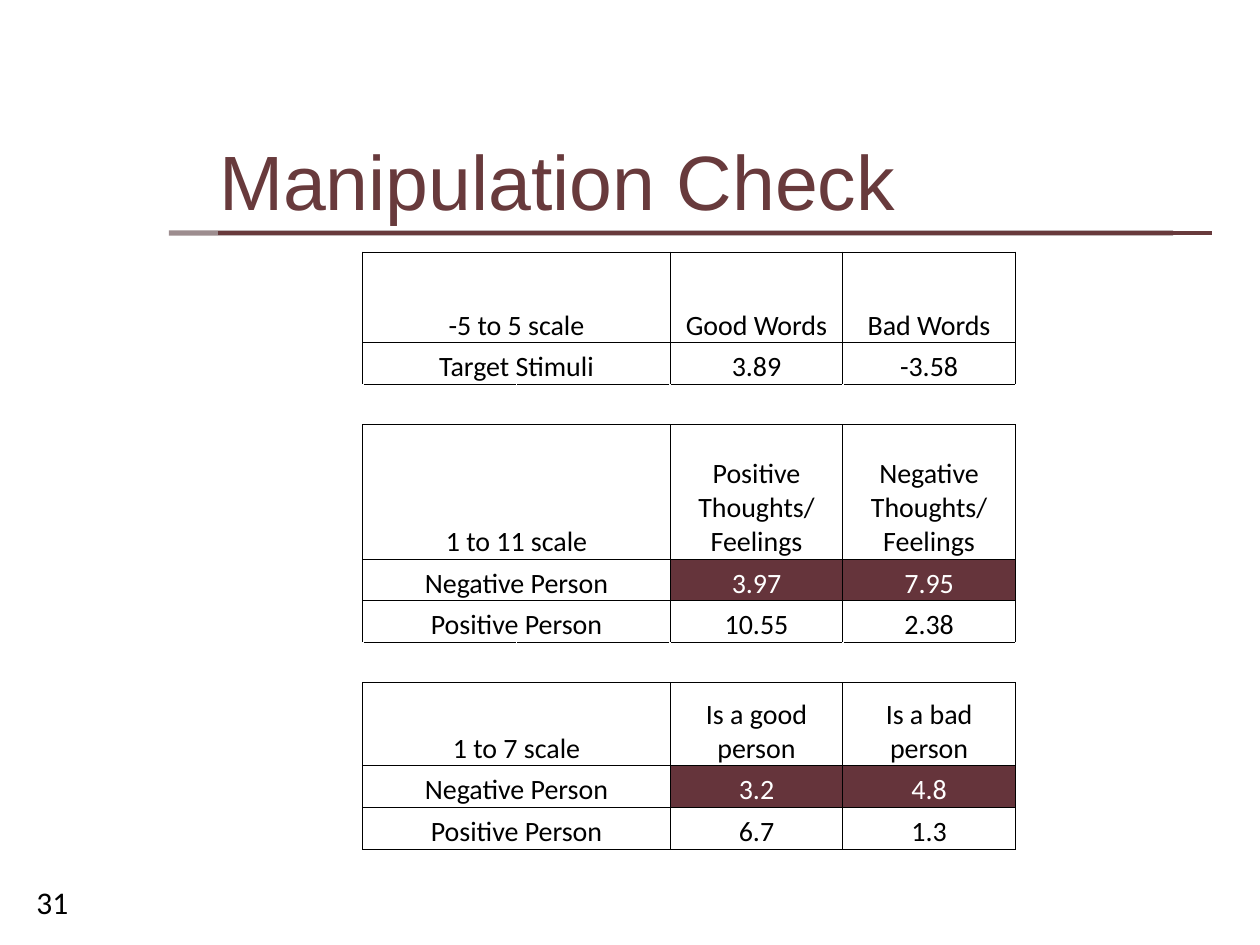
from lxml.etree import SubElement
from pptx import Presentation
from pptx.dml.color import RGBColor
from pptx.enum.shapes import MSO_CONNECTOR
from pptx.enum.text import MSO_ANCHOR, MSO_AUTO_SIZE, PP_ALIGN
from pptx.oxml.ns import qn
from pptx.util import Inches, Pt

BLACK = RGBColor(0x00, 0x00, 0x00)
WHITE = RGBColor(0xFF, 0xFF, 0xFF)
MAROON = RGBColor(0x68, 0x3A, 0x3C)
DARK_MAROON = RGBColor(0x3C, 0x1C, 0x21)
HIGHLIGHT = RGBColor(0x65, 0x34, 0x3B)

RULE_TOP = 1.85
COLUMN_WIDTHS = [1.22, 1.22, 1.37, 1.37]
LINE_HEIGHT = 0.33
SPACER_HEIGHT = 0.32
SECTIONS = [
    (0.72, [
        ("-5 to 5 scale", "Good Words", "Bad Words"),
        ("Target Stimuli", "3.89", "-3.58"),
    ]),
    (1.07, [
        ("1 to 11 scale", "Positive Thoughts/ Feelings", "Negative Thoughts/ Feelings"),
        ("Negative Person", "3.97", "7.95"),
        ("Positive Person", "10.55", "2.38"),
    ]),
    (0.66, [
        ("1 to 7 scale", "Is a good person", "Is a bad person"),
        ("Negative Person", "3.2", "4.8"),
        ("Positive Person", "6.7", "1.3"),
    ]),
]


def format_text(paragraph, font_name, size, color):
    for run in paragraph.runs:
        run.font.name = font_name
        run.font.size = Pt(size)
        run.font.color.rgb = color


def add_rule(slide, left, right, color, width, opacity=None):
    rule = slide.shapes.add_connector(
        MSO_CONNECTOR.STRAIGHT,
        Inches(left), Inches(RULE_TOP), Inches(right), Inches(RULE_TOP))
    rule.line.color.rgb = color
    rule.line.width = Pt(width)
    properties = rule._element.spPr
    if opacity is not None:
        color_element = properties.find(".//" + qn("a:srgbClr"))
        SubElement(color_element, qn("a:alpha"), val=str(opacity * 1000))
    SubElement(properties, qn("a:effectLst"))


def add_text(slide, text, left, top, width, height, font_name, size, color):
    box = slide.shapes.add_textbox(
        Inches(left), Inches(top), Inches(width), Inches(height))
    box.text_frame.text = text
    format_text(box.text_frame.paragraphs[0], font_name, size, color)
    return box.text_frame


def set_borders(cell, sides):
    properties = cell._tc.get_or_add_tcPr()
    for side in sides:
        border = SubElement(properties, qn(f"a:ln{side}"), w=str(Pt(0.5)))
        fill = SubElement(border, qn("a:solidFill"))
        SubElement(fill, qn("a:srgbClr"), val=str(BLACK))


def format_cell(cell, sides):
    cell.margin_left = cell.margin_right = cell.margin_top = Inches(0.01)
    cell.margin_bottom = 0
    cell.vertical_anchor = MSO_ANCHOR.BOTTOM
    set_borders(cell, sides)
    cell.fill.background()


def fill_row(table, row_index, texts):
    table.cell(row_index, 0).merge(table.cell(row_index, 1))
    for column_index, text in zip((0, 2, 3), texts):
        cell = table.cell(row_index, column_index)
        cell.text_frame.text = text
        paragraph = cell.text_frame.paragraphs[0]
        paragraph.alignment = PP_ALIGN.CENTER
        highlighted = texts[0] == "Negative Person" and column_index > 0
        if highlighted:
            cell.fill.solid()
            cell.fill.fore_color.rgb = HIGHLIGHT
        format_text(paragraph, "Calibri", 16, WHITE if highlighted else BLACK)


def add_results_table(slide):
    rows = []
    for header_height, lines in SECTIONS:
        if rows:
            rows.append((SPACER_HEIGHT, None))
        rows.append((header_height, lines[0]))
        rows.extend((LINE_HEIGHT, line) for line in lines[1:])

    table = slide.shapes.add_table(
        len(rows), len(COLUMN_WIDTHS), Inches(2.88), Inches(2),
        Inches(sum(COLUMN_WIDTHS)), Inches(sum(height for height, _ in rows))).table
    table.first_row = False
    table.horz_banding = False
    for column, width in zip(table.columns, COLUMN_WIDTHS):
        column.width = Inches(width)
    for row_index, (height, texts) in enumerate(rows):
        row = table.rows[row_index]
        row.height = Inches(height)
        for cell in row.cells:
            format_cell(cell, "LRTB" if texts else "TB")
        if texts:
            fill_row(table, row_index, texts)


def main():
    presentation = Presentation()
    presentation.slide_width = Inches(10)
    presentation.slide_height = Inches(7.5)
    slide = presentation.slides.add_slide(presentation.slide_layouts[6])

    add_rule(slide, 1.34, 9.31, DARK_MAROON, 3, opacity=50)
    add_rule(slide, 1.73, 9.62, MAROON, 2.5)
    add_rule(slide, 1.86, 9.31, MAROON, 2.5)

    number = add_text(slide, "31", 0.19, 6.96, 0.5, 0.4, "Calibri", 18, BLACK)
    number.word_wrap = False
    number.auto_size = MSO_AUTO_SIZE.SHAPE_TO_FIT_TEXT

    title = add_text(slide, "Manipulation Check", 1.64, 0.4, 7.67, 1.45,
                     "Arial", 44, MAROON)
    title.word_wrap = True
    title.vertical_anchor = MSO_ANCHOR.BOTTOM
    title.paragraphs[0].line_spacing = 0.9

    add_results_table(slide)
    presentation.save("out.pptx")


if __name__ == "__main__":
    main()
